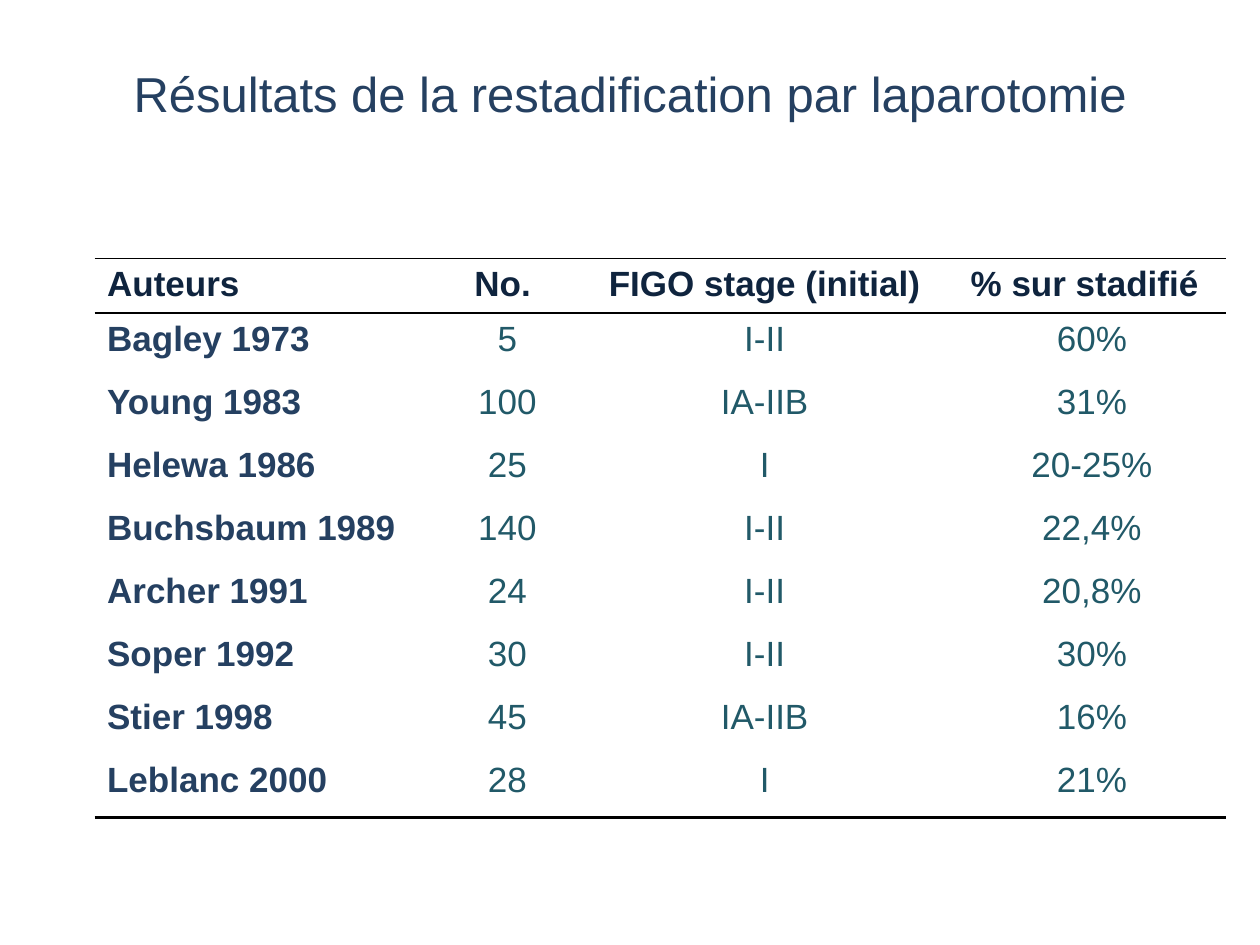
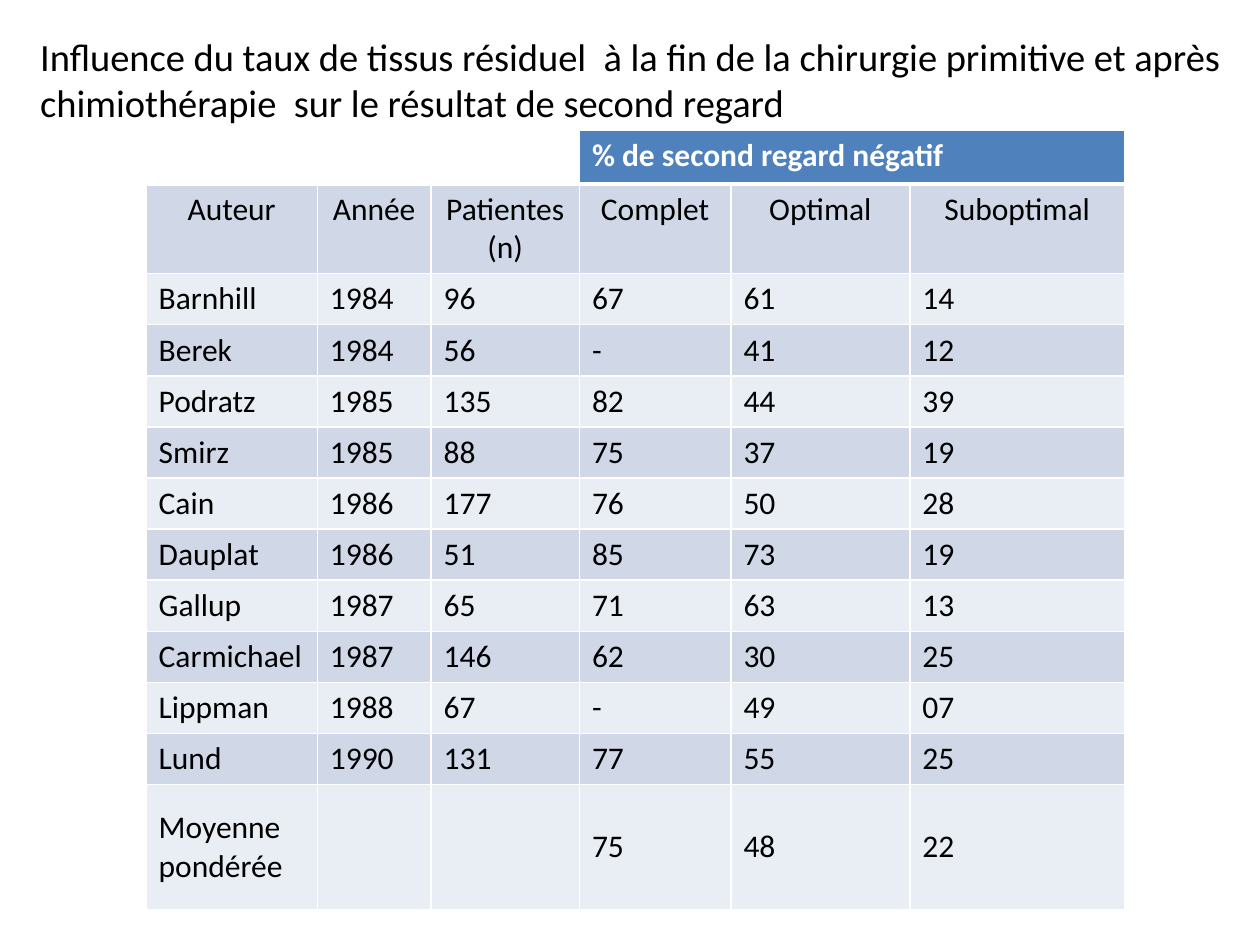
"""Build two slides of surgical result tables."""
import dataclasses

import lxml.etree
import pptx
import pptx.dml.color
import pptx.enum.text
import pptx.oxml.ns
import pptx.util

Pt = pptx.util.Pt
ALIGN = pptx.enum.text.PP_ALIGN
ANCHOR = pptx.enum.text.MSO_ANCHOR


@dataclasses.dataclass(frozen=True)
class Theme:
    sans: str = "Arial"
    body: str = "Calibri"
    navy: str = "254061"
    midnight: str = "0F243E"
    teal: str = "215968"
    black: str = "000000"
    white: str = "FFFFFF"
    blue: str = "4F81BD"
    bands: tuple = ("E9EDF4", "D0D8E8")
    large_title: int = 28
    small_title: int = 22
    large_cell: int = 20
    small_cell: int = 18


def write(frame, text, font, size, color, bold=False, align=ALIGN.LEFT):
    para = frame.paragraphs[0]
    para.alignment = align
    span = para.add_run()
    span.text = text
    span.font.name = font
    span.font.size = Pt(size)
    span.font.bold = bold
    span.font.color.rgb = pptx.dml.color.RGBColor.from_string(color)


class Painter:
    def __init__(self, deck, theme):
        self.deck = deck
        self.theme = theme
        self.page = None

    def new_page(self):
        self.page = self.deck.slides.add_slide(self.deck.slide_layouts[5])

    def title(self, text, left, top, width, height, inset=3.6, **style):
        box = self.page.shapes.title
        box.left, box.top, box.width, box.height = map(Pt, (left, top, width, height))
        frame = box.text_frame
        frame.word_wrap = True
        frame.auto_size = pptx.enum.text.MSO_AUTO_SIZE.NONE
        frame.vertical_anchor = ANCHOR.TOP
        frame.margin_top = Pt(inset)
        write(frame, text, **style)

    def table(self, left, top, widths, heights):
        box = self.page.shapes.add_table(
            len(heights), len(widths), Pt(left), Pt(top), Pt(sum(widths)), Pt(sum(heights)))
        table = box.table
        table.first_row = table.horz_banding = False
        for column, width in zip(table.columns, widths):
            column.width = Pt(width)
        for row, height in zip(table.rows, heights):
            row.height = Pt(height)
        return table

    def cell(self, cell, text, fill=None, borders=None, anchor=ANCHOR.TOP, **style):
        self.borders(cell, borders or {})
        if fill:
            cell.fill.solid()
            cell.fill.fore_color.rgb = pptx.dml.color.RGBColor.from_string(fill)
        else:
            cell.fill.background()
        cell.vertical_anchor = anchor
        if text:
            write(cell.text_frame, text, **style)

    def borders(self, cell, borders):
        qn = pptx.oxml.ns.qn
        properties = cell._tc.get_or_add_tcPr()
        for side in "LRTB":
            color, width = borders.get(side, (None, 0))
            line = lxml.etree.SubElement(properties, qn(f"a:ln{side}"), w=str(Pt(width)))
            if color:
                solid = lxml.etree.SubElement(line, qn("a:solidFill"))
                lxml.etree.SubElement(solid, qn("a:srgbClr"), val=color)
            else:
                lxml.etree.SubElement(line, qn("a:noFill"))


RESTAGING = [
    ("Auteurs", "No. ", "FIGO stage (initial)", "% sur stadifié"),
    ("Bagley 1973", "5", "I-II", "60%"),
    ("Young 1983", "100", "IA-IIB", "31%"),
    ("Helewa 1986", "25", "I", "20-25%"),
    ("Buchsbaum 1989", "140", "I-II", "22,4%"),
    ("Archer 1991", "24", "I-II", "20,8%"),
    ("Soper 1992", "30", "I-II", "30%"),
    ("Stier 1998", "45", "IA-IIB", "16%"),
    ("Leblanc 2000", "28", "I", "21%"),
]

SECOND_LOOK = [
    ("", "", "", "% de second regard négatif", "", ""),
    ("Auteur", "Année", "Patientes (n)", "Complet", "Optimal", "Suboptimal"),
    ("Barnhill", "1984", "96", "67", "61", "14"),
    ("Berek", "1984", "56", "-", "41", "12"),
    ("Podratz", "1985", "135", "82", "44", "39"),
    ("Smirz", "1985", "88", "75", "37", "19"),
    ("Cain", "1986", "177", "76", "50", "28"),
    ("Dauplat", "1986", "51", "85", "73", "19"),
    ("Gallup", "1987", "65", "71", "63", "13"),
    ("Carmichael", "1987", "146", "62", "30", "25"),
    ("Lippman", "1988", "67", "-", "49", "07"),
    ("Lund", "1990", "131", "77", "55", "25"),
    ("Moyenne pondérée", "", "", "75", "48", "22"),
]


def restaging_page(painter):
    theme = painter.theme
    painter.new_page()
    painter.title("Résultats de la restadification par laparotomie", 54, 30.2, 612, 52.6,
                  inset=6, font=theme.sans, size=theme.large_title, color=theme.navy,
                  align=ALIGN.CENTER)
    last = len(RESTAGING) - 1
    table = painter.table(54, 147.6, [199.5, 73, 221, 153], [31.4] + [36] * last)
    thin, thick = (theme.black, 1), (theme.black, 2.25)
    rules = {0: {"T": thin, "B": thin}, 1: {"T": thin}, last: {"B": thick}}
    for r, record in enumerate(RESTAGING):
        for c, text in enumerate(record):
            header, author = r == 0, c == 0
            color = theme.midnight if header else theme.navy if author else theme.teal
            left = author or (header and c == 3)
            painter.cell(table.cell(r, c), text, borders=rules.get(r),
                         font=theme.sans, size=theme.large_cell, color=color,
                         bold=header or author, align=ALIGN.LEFT if left else ALIGN.CENTER)


def second_look_page(painter):
    theme = painter.theme
    painter.new_page()
    painter.title("Influence du taux de tissus résiduel  à la fin de la chirurgie primitive et "
                  "après chimiothérapie  sur le résultat de second regard",
                  15.8, 15.1, 695.5, 60.5,
                  font=theme.body, size=theme.small_title, color=theme.black)
    last = len(SECOND_LOOK) - 1
    table = painter.table(83.5, 74.2, [97.8, 65, 84.8, 86.6, 102.2, 122.8],
                          [31, 50.3] + [29.2] * (last - 2) + [71.4])
    thin, thick = (theme.white, 1), (theme.white, 3)
    for r, record in enumerate(SECOND_LOOK):
        borders = dict.fromkeys("LRTB", thin)
        if r < 2:
            borders["B" if r == 0 else "T"] = thick
        for c, text in enumerate(record):
            fill = theme.bands[r % 2]
            if r == 0:
                fill = theme.white if c < 3 else theme.blue
            painter.cell(table.cell(r, c), text, fill=fill, borders=borders,
                         anchor=ANCHOR.MIDDLE if r == last else ANCHOR.TOP,
                         font=theme.body, size=theme.small_cell,
                         color=theme.white if r == 0 else theme.black, bold=r == 0,
                         align=ALIGN.CENTER if r == 1 else ALIGN.LEFT)
    table.cell(0, 3).merge(table.cell(0, 5))


def main():
    deck = pptx.Presentation()
    deck.slide_width, deck.slide_height = Pt(720), Pt(540)
    painter = Painter(deck, Theme())
    restaging_page(painter)
    second_look_page(painter)
    deck.save("out.pptx")


if __name__ == "__main__":
    main()
